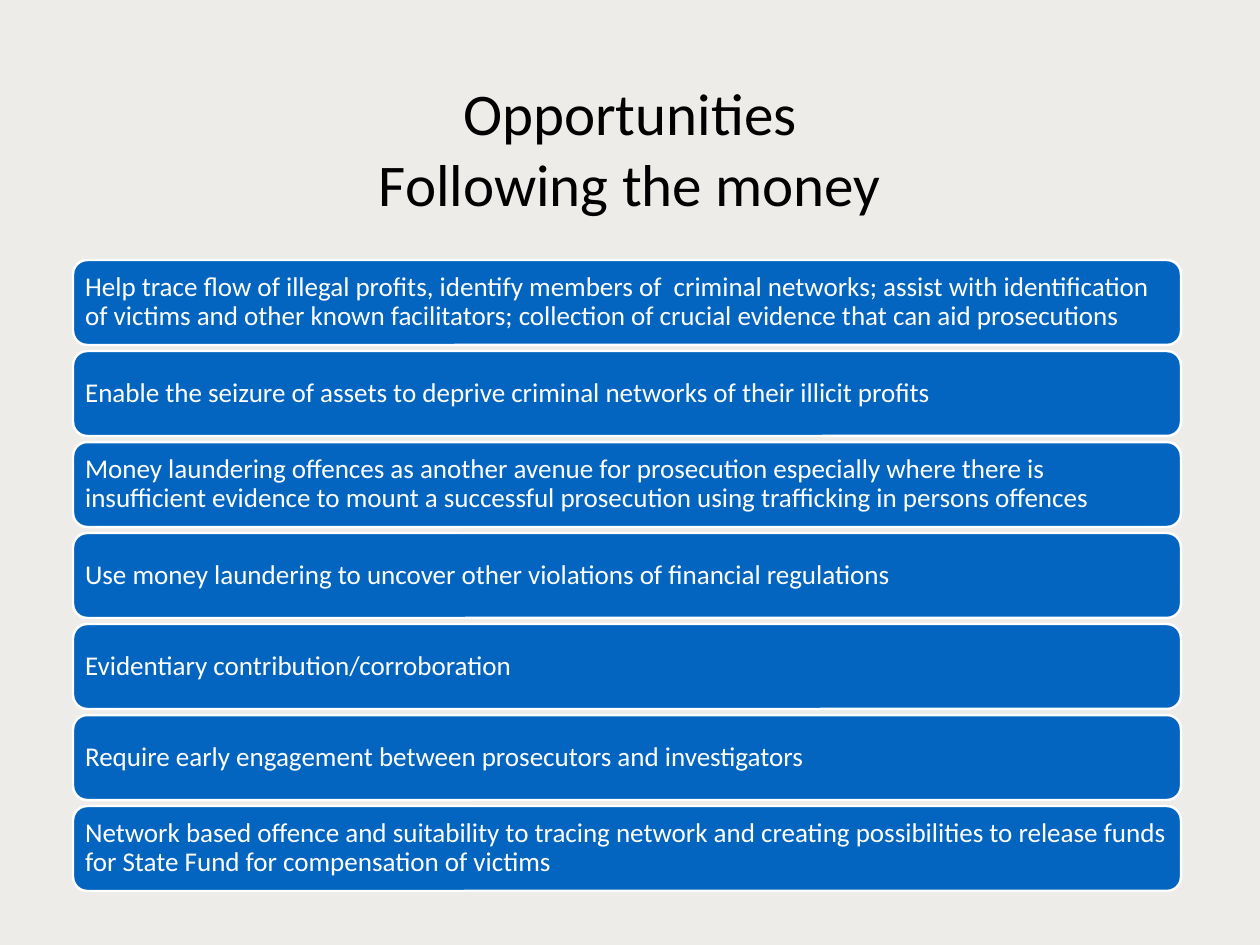
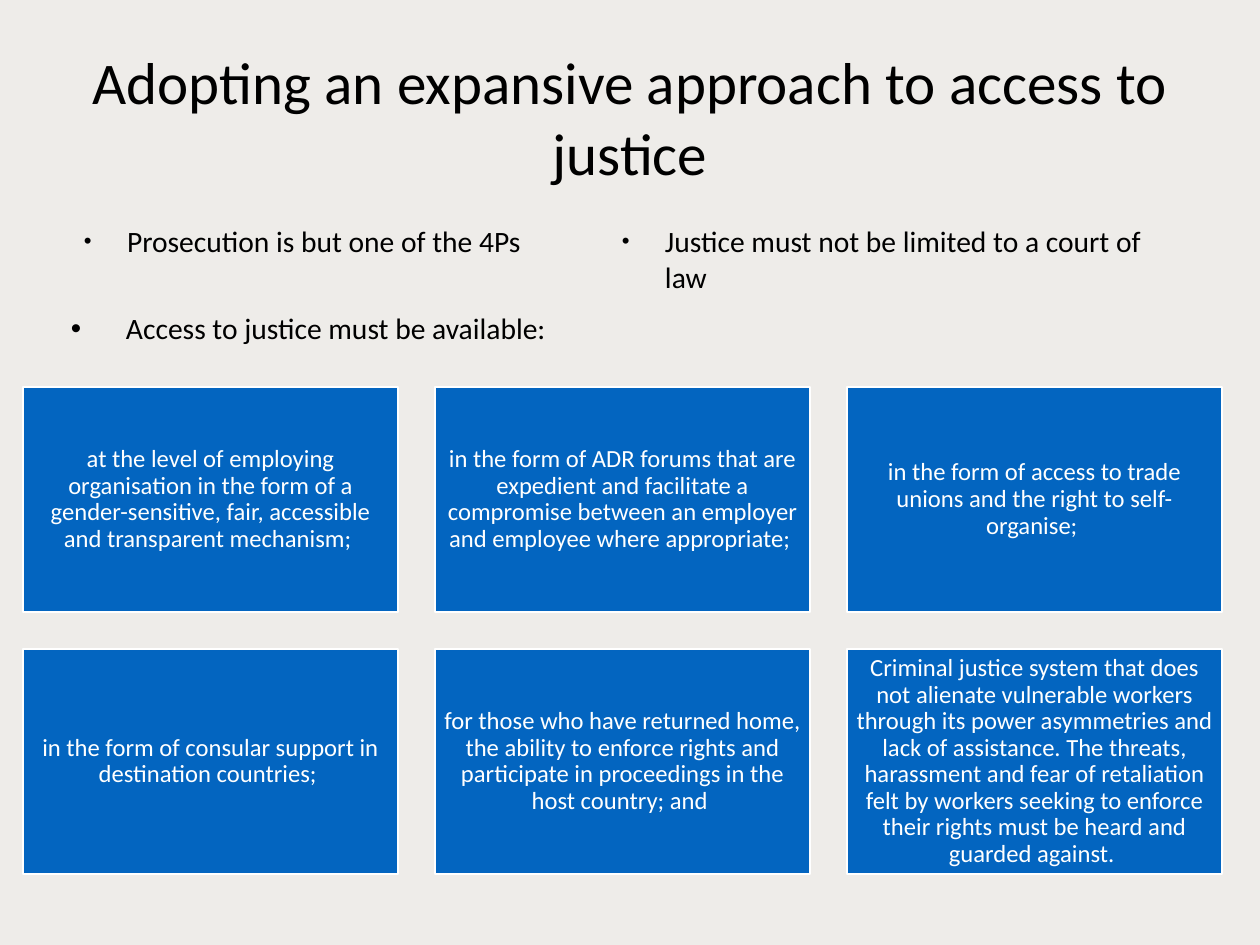
import lxml.etree
import pptx
import pptx.dml.color
import pptx.enum.shapes
import pptx.enum.text
import pptx.oxml.ns
import pptx.util

SCALE = 10320  # EMU in one px
COLORS = {"paper": "EEECE9", "blue": "0365C0", "white": "FFFFFF", "black": "000000"}
FONT = "Calibri"
TITLE_ONLY, TITLE_AND_BODY = 5, 1
RECTANGLE = pptx.enum.shapes.MSO_SHAPE.RECTANGLE
ROUNDED = pptx.enum.shapes.MSO_SHAPE.ROUNDED_RECTANGLE
LEFT = pptx.enum.text.PP_ALIGN.LEFT
CENTER = pptx.enum.text.PP_ALIGN.CENTER


def px(length):
    return pptx.util.Emu(length * SCALE)


def rgb(name):
    return pptx.dml.color.RGBColor.from_string(COLORS[name])


class Deck:
    """Holds the shared style and the current slide."""

    def __init__(self, width, height):
        self.presentation = pptx.Presentation()
        self.presentation.slide_width = px(width)
        self.presentation.slide_height = px(height)
        fill = self.presentation.slide_master.background.fill
        fill.solid()
        fill.fore_color.rgb = rgb("paper")
        self.slide = None

    def new_slide(self, layout, title_lines, title_height):
        layouts = self.presentation.slide_layouts
        self.slide = self.presentation.slides.add_slide(layouts[layout])
        title = self.slide.shapes.title
        self.place(title, 92, 43, 1076, title_height)
        paragraph = self.frame(title, 0).paragraphs[0]
        paragraph.alignment = CENTER
        for number, line in enumerate(title_lines):
            if number:
                paragraph.add_line_break()
            self.run(paragraph, line, 48, "black")

    def place(self, shape, left, top, width, height):
        shape.left, shape.top = px(left), px(top)
        shape.width, shape.height = px(width), px(height)

    def frame(self, shape, inset):
        frame = shape.text_frame
        frame.word_wrap = True
        frame.auto_size = pptx.enum.text.MSO_AUTO_SIZE.NONE
        frame.vertical_anchor = pptx.enum.text.MSO_ANCHOR.MIDDLE
        frame.margin_left = frame.margin_right = px(inset)
        frame.margin_top = frame.margin_bottom = px(inset)
        return frame

    def run(self, paragraph, text, size, color):
        run = paragraph.add_run()
        run.text = text
        run.font.name = FONT
        run.font.size = pptx.util.Pt(size)
        run.font.color.rgb = rgb(color)

    def bullet(self, paragraph, text, indent, percent=100):
        self.run(paragraph, text, 24, "black")
        properties = paragraph._p.get_or_add_pPr()
        properties.set("marL", str(px(indent)))
        properties.set("indent", str(-px(indent)))
        for tag, name, value in (("a:buSzPct", "val", str(percent * 1000)),
                                 ("a:buFont", "typeface", "Arial"),
                                 ("a:buChar", "char", "•")):
            lxml.etree.SubElement(properties, pptx.oxml.ns.qn(tag)).set(name, value)

    def column_list(self, items, left, top, width, height):
        body = self.slide.placeholders[1]
        self.place(body, left, top, width, height)
        frame = self.frame(body, 0)
        frame._txBody.bodyPr.set("numCol", str(len(items)))
        for number, item in enumerate(items):
            paragraph = frame.add_paragraph() if number else frame.paragraphs[0]
            paragraph.space_before = pptx.util.Pt(18)
            self.bullet(paragraph, item, 43, 75)

    def bullet_line(self, text, left, top, width, height):
        box = self.slide.shapes.add_textbox(px(left), px(top), px(width), px(height))
        self.bullet(self.frame(box, 5).paragraphs[0], text, 55)

    def panel(self, kind, text, left, top, width, height, size, inset, alignment):
        shape = self.slide.shapes.add_shape(
            kind, px(left), px(top), px(width), px(height))
        shape.shadow.inherit = False
        shape.fill.solid()
        shape.fill.fore_color.rgb = rgb("blue")
        shape.line.color.rgb = rgb("white")
        shape.line.width = pptx.util.Pt(2)
        paragraph = self.frame(shape, inset).paragraphs[0]
        paragraph.alignment = alignment
        paragraph.line_spacing = 0.9
        self.run(paragraph, text, size, "white")


OPPORTUNITIES = [
    "Help trace flow of illegal profits, identify members of  criminal networks; "
    "assist with identification of victims and other known facilitators; "
    "collection of crucial evidence that can aid prosecutions",
    "Enable the seizure of assets to deprive criminal networks of their illicit profits",
    "Money laundering offences as another avenue for prosecution especially where "
    "there is insufficient evidence to mount a successful prosecution using "
    "trafficking in persons offences",
    "Use money laundering to uncover other violations of financial regulations",
    "Evidentiary contribution/corroboration",
    "Require early engagement between prosecutors and investigators",
    "Network based offence and suitability to tracing network and creating "
    "possibilities to release funds for State Fund for compensation of victims",
]
ACCESS_ROUTES = [
    "at the level of employing organisation in the form of a gender-sensitive, "
    "fair, accessible and transparent mechanism; ",
    "in the form of ADR forums that are expedient and facilitate a compromise "
    "between an employer and employee where appropriate; ",
    "in the form of access to trade unions and the right to self-organise; ",
    "in the form of consular support in destination countries; ",
    "for those who have returned home, the ability to enforce rights and "
    "participate in proceedings in the host country; and ",
    "Criminal justice system that does not alienate vulnerable workers through "
    "its power asymmetries and lack of assistance. The threats, harassment and "
    "fear of retaliation felt by workers seeking to enforce their rights must be "
    "heard and guarded against. ",
]


def main():
    deck = Deck(1260, 945)

    # Opportunities: a stack of bars
    deck.new_slide(TITLE_ONLY, ["Opportunities", "Following the money"], 209)
    bar_height, bar_gap = 85, 6
    for row, text in enumerate(OPPORTUNITIES):
        top = 260 + row * (bar_height + bar_gap)
        deck.panel(ROUNDED, text, 73, top, 1108, bar_height, 22, 8, LEFT)

    # Access to justice: bullets above a grid of cards
    deck.new_slide(TITLE_AND_BODY,
                   ["Adopting an expansive approach to access to justice"], 147)
    deck.column_list(["Prosecution is but one of the 4Ps",
                      "Justice must not be limited to a court of law"],
                     84, 225, 1076, 67)
    card_width, card_height, card_gap = 375, 225, 37
    for number, text in enumerate(ACCESS_ROUTES):
        row, column = divmod(number, 3)
        left = 23 + column * (card_width + card_gap)
        top = 387 + row * (card_height + card_gap)
        deck.panel(RECTANGLE, text, left, top, card_width, card_height, 20, 7, CENTER)
    deck.bullet_line("Access to justice must be available:", 66, 305, 1108, 46)

    deck.presentation.save("out.pptx")


if __name__ == "__main__":
    main()
